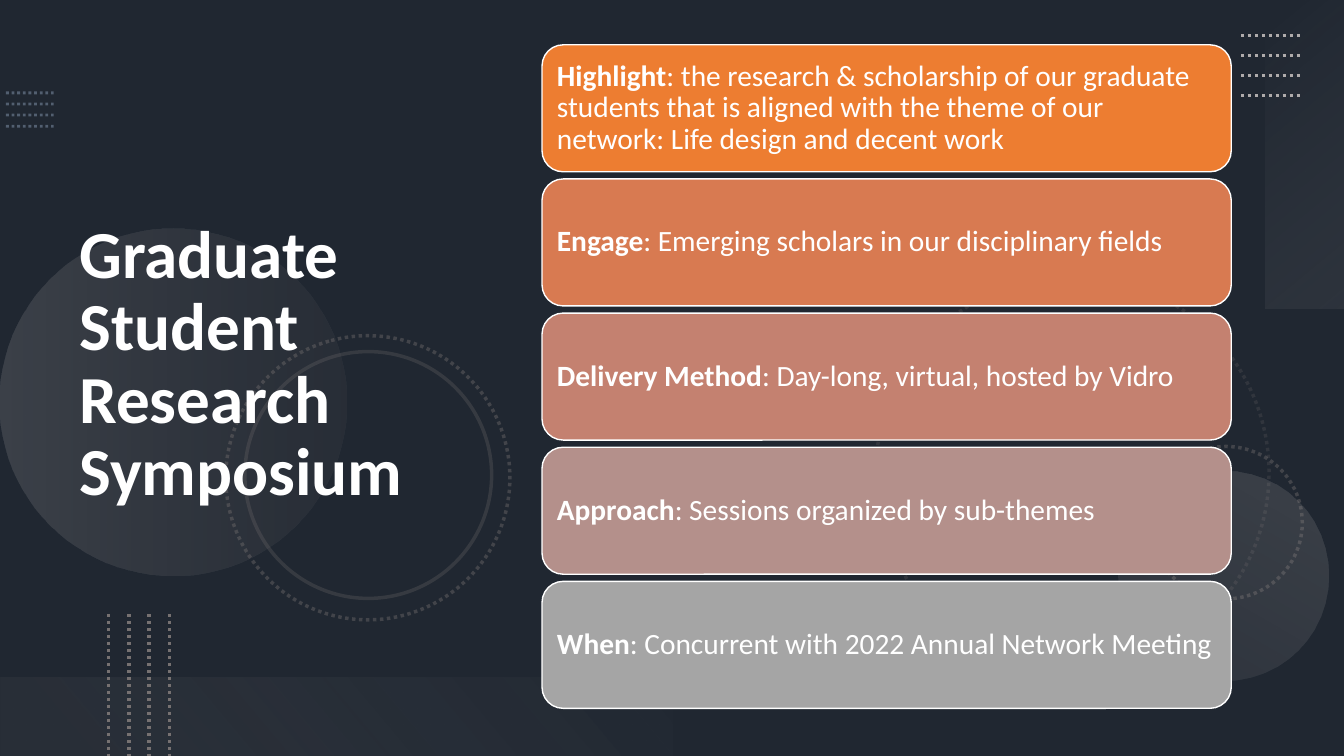
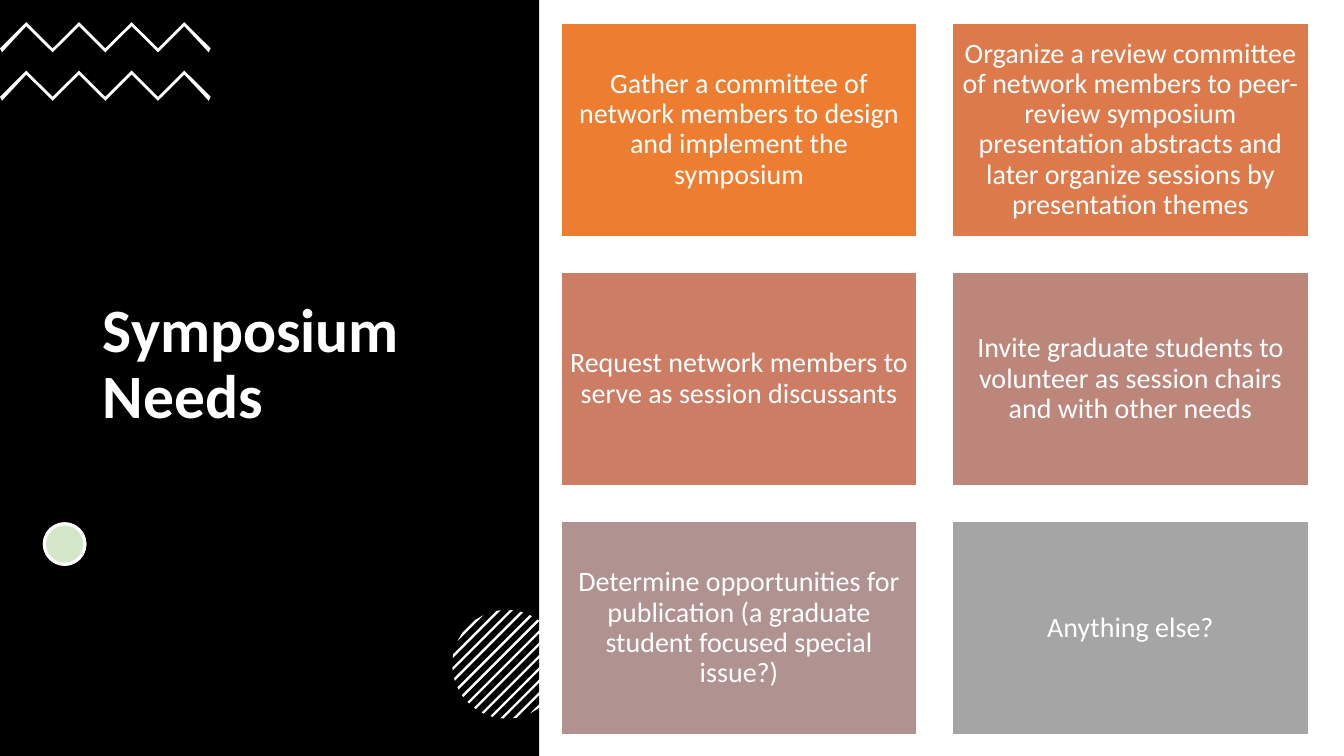
from math import sqrt

from pptx import Presentation
from pptx.dml.color import RGBColor
from pptx.enum.dml import MSO_LINE
from pptx.enum.shapes import MSO_CONNECTOR, MSO_SHAPE
from pptx.enum.text import MSO_ANCHOR, MSO_AUTO_SIZE, PP_ALIGN
from pptx.oxml.ns import qn
from pptx.oxml.xmlchemy import OxmlElement
from pptx.util import Cm, Pt

SLIDE_W, SLIDE_H = 33.87, 19.05
FONT = "Calibri"
WHITE, BLACK, NAVY, GREEN = "FFFFFF", "000000", "44546A", "70AD47"
SILVER, GREY, STEEL = "AFABAB", "767171", "8497B0"

POINTS = [
    ("Highlight", ": the research & scholarship of our graduate students that is "
     "aligned with the theme of our network: Life design and decent work", "ED7D31"),
    ("Engage", ": Emerging scholars in our disciplinary fields", "D87A51"),
    ("Delivery Method", ": Day-long, virtual, hosted by Vidro", "C48170"),
    ("Approach", ": Sessions organized by sub-themes", "B4908B"),
    ("When", ": Concurrent with 2022 Annual Network Meeting", "A5A5A5"),
]
NEEDS = [
    ("Gather a committee of network members to design and implement the symposium", "ED7D31"),
    ("Organize a review committee of network members to peer-review symposium "
     "presentation abstracts and later organize sessions by presentation themes", "DC7A4B"),
    ("Request network members to serve as session discussants", "CC7D64"),
    ("Invite graduate students to volunteer as session chairs and with other needs", "BD867B"),
    ("Determine opportunities for publication (a graduate student focused special issue?)",
     "B09391"),
    ("Anything else?", "A5A5A5"),
]


def rgb(value):
    """Turn a hex string into a colour."""
    return RGBColor.from_string(value)


def set_alpha(element, *percents):
    """Give the explicit colours below an element their opacity, in order."""
    for clr, percent in zip(element.iter(qn("a:srgbClr")), percents):
        alpha = OxmlElement("a:alpha")
        alpha.set("val", str(percent * 1000))
        clr.append(alpha)


def paint(sp, fill=None, opacity=100):
    """Give a shape a plain fill or none, and no line or shadow."""
    sp.shadow.inherit = False
    sp.line.fill.background()
    if fill:
        sp.fill.solid()
        sp.fill.fore_color.rgb = rgb(fill)
        set_alpha(sp._element.spPr, opacity)
    else:
        sp.fill.background()


def outline(sp, color, width, opacity=100, dotted=False):
    """Style the line of a shape or connector."""
    sp.line.color.rgb = rgb(color)
    sp.line.width = Pt(width)
    if dotted:
        sp.line.dash_style = MSO_LINE.ROUND_DOT
    set_alpha(sp._element.spPr.find(qn("a:ln")), opacity)


def add_box(s, kind, box, fill=None, opacity=100, rotation=0):
    """Add a preset shape in a box of left, top, width and height."""
    sp = s.shapes.add_shape(kind, *map(Cm, box))
    sp.rotation = rotation
    paint(sp, fill, opacity)
    return sp


def add_gradient(s, kind, box, rotation, angle, stops):
    """Add a shape with a two-stop gradient of position, colour and opacity."""
    sp = add_box(s, kind, box, rotation=rotation)
    sp.fill.gradient()
    sp.fill.gradient_angle = 360 - angle
    for stop, (position, color, _) in zip(sp.fill.gradient_stops, stops):
        stop.position = position
        stop.color.rgb = rgb(color)
    set_alpha(sp._element.spPr, *[opacity for _, _, opacity in stops])


def add_polygon(s, points):
    """Add a closed white outline through points in centimetres."""
    pts = [(Cm(x), Cm(y)) for x, y in points]
    builder = s.shapes.build_freeform(*pts[0], scale=1.0)
    builder.add_line_segments(pts[1:], close=True)
    paint(builder.convert_to_shape(), WHITE)


def add_run(p, text, size, bold=False):
    """Add one white run to a paragraph."""
    r = p.add_run()
    r.text = text
    r.font.name, r.font.size, r.font.bold = FONT, Pt(size), bold
    r.font.color.rgb = rgb(WHITE)


def set_text(sp, runs, size, align, inset=0.25):
    """Fill a shape with runs of text and bold flags."""
    tf = sp.text_frame
    tf.word_wrap = True
    tf.auto_size = MSO_AUTO_SIZE.NONE
    tf.vertical_anchor = MSO_ANCHOR.MIDDLE
    tf.margin_left = tf.margin_right = tf.margin_top = tf.margin_bottom = Cm(inset)
    p = tf.paragraphs[0]
    p.alignment = align
    p.line_spacing = 0.9
    for text, bold in runs:
        add_run(p, text, size, bold)


def add_title(s, box, text, size):
    """Place the title placeholder in front of the decoration."""
    sp = s.shapes.title
    sp.left, sp.top, sp.width, sp.height = map(Cm, box)
    set_text(sp, [(text, True)], size, PP_ALIGN.LEFT)
    s.shapes._spTree.append(sp._element)


def new_slide(prs, color):
    """Add a title-only slide with a plain background."""
    s = prs.slides.add_slide(prs.slide_layouts[5])
    s.background.fill.solid()
    s.background.fill.fore_color.rgb = rgb(color)
    return s


def dotted_lines(s, box, color, width, opacity=100, vertical=False):
    """Spread four dotted lines evenly over a box."""
    x, y, w, h = box
    for i in range(4):
        dx, dy = (w * i / 3, 0) if vertical else (0, h * i / 3)
        end = (x + dx, y + h) if vertical else (x + w, y + dy)
        ln = s.shapes.add_connector(
            MSO_CONNECTOR.STRAIGHT, *map(Cm, (x + dx, y + dy, *end)))
        outline(ln, color, width, opacity, dotted=True)
        ln._element.spPr.append(OxmlElement("a:effectLst"))


def ring(s, x, y, size, rotation, opacity, dotted=True):
    """Add an open grey circle."""
    sp = add_box(s, MSO_SHAPE.OVAL, (x, y, size, size), rotation=rotation)
    outline(sp, GREY, 2.5, opacity, dotted)


def dark_backdrop(s):
    """Draw the tint, circles, bars and dotted lines of the dark slide."""
    add_box(s, MSO_SHAPE.RECTANGLE, (0, 0, SLIDE_W, SLIDE_H), BLACK, 53)
    dotted_lines(s, (0.15, 2.34, 1.2, 0.84), STEEL, 2, 50)
    ring(s, 22.07, 6.96, 9.91, 75, 20)
    ring(s, 28.98, 11.25, 3.84, 270, 40)
    add_gradient(s, MSO_SHAPE.OVAL, (0, 5.77, 8.74, 8.74), 270, 90,
                 [(0, SILVER, 20), (1, GREY, 10)])
    add_gradient(s, MSO_SHAPE.OVAL, (28.19, 11.86, 5.28, 5.28), 210, 90,
                 [(0, SILVER, 10), (1, SILVER, 20)])
    ring(s, 5.69, 8.46, 7.16, 75, 40)
    ring(s, 6.17, 8.86, 6.22, 75, 25, dotted=False)
    add_gradient(s, MSO_SHAPE.RECTANGLE, (29.0, 2.9, 7.77, 1.98), 270, 140,
                 [(0, "F5F5F5", 0), (1, SILVER, 10)])
    dotted_lines(s, (31.27, 0.89, 1.52, 1.52), SILVER, 2.5)
    add_gradient(s, MSO_SHAPE.RECTANGLE, (0, 17.07, 16.94, 1.98), 180, 140,
                 [(0.1, GREY, 10), (1, "F1F0F0", 0)])
    dotted_lines(s, (2.74, 15.47, 1.53, 3.58), GREY, 2.5, vertical=True)


def point_list(s, box, gap):
    """Stack the labelled points down a box."""
    x, y, w, h = box
    card_h = (h - gap * (len(POINTS) - 1)) / len(POINTS)
    for i, (label, text, color) in enumerate(POINTS):
        sp = add_box(s, MSO_SHAPE.ROUNDED_RECTANGLE,
                     (x, y + i * (card_h + gap), w, card_h), color)
        outline(sp, WHITE, 1)
        set_text(sp, [(label, True), (text, False)], 21, PP_ALIGN.LEFT, 0.22)


def need_grid(s, box, gap, cols=2):
    """Lay the needs out as a grid of equal cards."""
    x, y, w, h = box
    rows = len(NEEDS) // cols
    card_w = (w - gap * (cols - 1)) / cols
    card_h = (h - gap * (rows - 1)) / rows
    for i, (text, color) in enumerate(NEEDS):
        row, col = divmod(i, cols)
        sp = add_box(s, MSO_SHAPE.RECTANGLE,
                     (x + col * (card_w + gap), y + row * (card_h + gap), card_w, card_h),
                     color)
        outline(sp, WHITE, 1)
        set_text(sp, [(text, False)], 20, PP_ALIGN.CENTER, 0.2)


def zigzag(s, box, thickness=0.1, peaks=4):
    """Draw a zigzag band across a box."""
    x, y, w, h = box
    steps = 2 * peaks
    top = [(x + w * i / steps, y + (0 if i % 2 else h - thickness))
           for i in range(steps + 1)]
    bottom = [(min(max(px, x + 0.05), x + w - 0.05), py + thickness) for px, py in top]
    add_polygon(s, top + bottom[::-1])


def striped_circle(s, box, stripes=13, pitch=0.22, half=0.03):
    """Draw a circle made of diagonal stripes."""
    x, y, size, _ = box
    radius = size / 2
    cx, cy = x + radius, y + radius
    for k in range(stripes):
        middle = (k - stripes // 2) * pitch
        points = []
        for offset, sign in ((middle - half, 1), (middle - half, -1),
                             (middle + half, -1), (middle + half, 1)):
            along = sign * sqrt(radius ** 2 - offset ** 2)
            points.append((cx + (offset + along) / sqrt(2), cy + (offset - along) / sqrt(2)))
        add_polygon(s, points)


def black_panel(s, box):
    """Draw the black side panel with its ornaments."""
    x, y, _, _ = box
    add_box(s, MSO_SHAPE.RECTANGLE, box, BLACK)
    for top in (0.56, 1.78):
        zigzag(s, (x, y + top, 5.31, 0.76))
    for color, opacity in ((WHITE, 100), (GREEN, 30)):
        dot = add_box(s, MSO_SHAPE.OVAL, (x + 1.12, y + 13.2, 1.02, 1.02), color, opacity)
        outline(dot, WHITE, 2.25)
    striped_circle(s, (x + 11.4, y + 15.37, 2.74, 2.74))


def symposium_slide(prs):
    """Build the slide that presents the symposium."""
    s = new_slide(prs, NAVY)
    dark_backdrop(s)
    add_title(s, (1.75, 1.37, 11.66, 15.67), "Graduate Student Research Symposium", 48)
    point_list(s, (13.66, 1.13, 17.37, 16.72), 0.18)


def needs_slide(prs):
    """Build the slide that lists the needs."""
    s = new_slide(prs, WHITE)
    black_panel(s, (0, 0, 13.59, SLIDE_H))
    add_title(s, (2.34, 3.33, 8.89, 11.76), "Symposium Needs", 44)
    need_grid(s, (14.14, 0.58, 18.83, 17.94), 0.9)


def main():
    """Build and save the presentation."""
    prs = Presentation()
    prs.slide_width, prs.slide_height = Cm(SLIDE_W), Cm(SLIDE_H)
    symposium_slide(prs)
    needs_slide(prs)
    prs.save("out.pptx")


if __name__ == "__main__":
    main()
